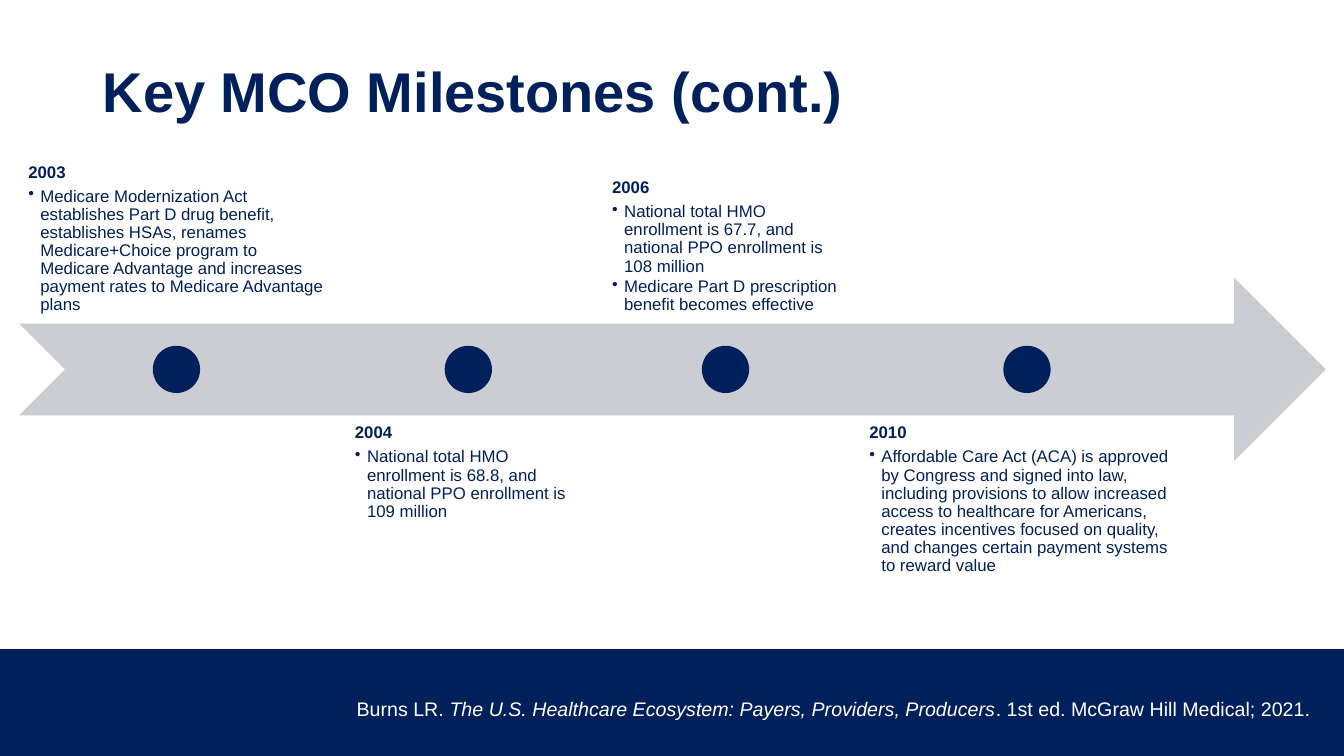
from dataclasses import dataclass

from lxml.etree import SubElement
from pptx import Presentation
from pptx.dml.color import RGBColor
from pptx.enum.shapes import MSO_SHAPE as Shape
from pptx.enum.text import MSO_ANCHOR as Anchor
from pptx.oxml.ns import qn
from pptx.util import Inches, Pt


@dataclass(frozen=True)
class Theme:
    """Colours, font and type sizes of the deck."""
    navy: RGBColor = RGBColor.from_string("00205B")
    grey: RGBColor = RGBColor.from_string("CCCDD2")
    white: RGBColor = RGBColor.from_string("FFFFFF")
    font: str = "Arial"
    title: float = 40
    body: float = 12
    source: float = 14
    line_spacing: float = 0.9


@dataclass(frozen=True)
class Box:
    """A rectangle that hands out areas of itself in percent."""
    left: float
    top: float
    width: float
    height: float

    def inner(self, left, top, width, height):
        """Return the inner box at the given percentages."""
        return Box(self.left + self.width * left / 100,
                   self.top + self.height * top / 100,
                   self.width * width / 100, self.height * height / 100)

    def lengths(self):
        """Return the position and size as whole slide units."""
        return [int(length) for length in (self.left, self.top, self.width, self.height)]


THEME = Theme()
MILESTONES = [
    ("2003", 24.07, [
        "Medicare Modernization Act establishes Part D drug benefit, establishes HSAs, "
        "renames Medicare+Choice program to Medicare Advantage and increases payment "
        "rates to Medicare Advantage plans"]),
    ("2004", 18.75, [
        "National total HMO enrollment is 68.8, and national PPO enrollment is 109 million"]),
    ("2006", 18.75, [
        "National total HMO enrollment is 67.7, and national PPO enrollment is 108 million",
        "Medicare Part D prescription benefit becomes effective"]),
    ("2010", 25.54, [
        "Affordable Care Act (ACA) is approved by Congress and signed into law, including "
        "provisions to allow increased access to healthcare for Americans, creates "
        "incentives focused on quality, and changes certain payment systems to reward value"]),
]
COLUMN_GAP = 0.93
SOURCE = [
    ("Burns LR. ", False),
    ("The U.S. Healthcare Ecosystem: Payers, Providers, Producers", True),
    (". 1st ed. McGraw Hill Medical; 2021.", False),
]


def add_filled(page, kind, box, color):
    """Add a flat shape without an outline."""
    shape = page.shapes.add_shape(kind, *box.lengths())
    shape.shadow.inherit = False
    shape.fill.solid()
    shape.fill.fore_color.rgb = color
    shape.line.fill.background()
    return shape


def add_frame(page, box, anchor=Anchor.TOP, wrap=True):
    """Add a text box and return its text frame."""
    frame = page.shapes.add_textbox(*box.lengths()).text_frame
    frame.word_wrap = wrap
    frame.vertical_anchor = anchor
    return frame


def style(span, size, color, bold=False, italic=False):
    """Format one run of text."""
    font = span.font
    font.name, font.size, font.bold, font.italic = THEME.font, Pt(size), bold, italic
    font.color.rgb = color


def add_bullet(para):
    """Give a paragraph a round bullet with a hanging indent."""
    properties = para._p.get_or_add_pPr()
    properties.set("marL", str(Inches(0.12)))
    properties.set("indent", str(-Inches(0.12)))
    SubElement(properties, qn("a:buChar"), char="•")


def add_title(page, box):
    """Write the slide title."""
    para = add_frame(page, box, Anchor.MIDDLE).paragraphs[0]
    para.text = "Key MCO Milestones (cont.)"
    para.line_spacing = THEME.line_spacing
    style(para.runs[0], THEME.title, THEME.navy, bold=True)


def add_milestone(page, box, anchor, year, events):
    """Write a year and its bulleted events."""
    frame = add_frame(page, box, anchor)
    frame.margin_left = frame.margin_right = Inches(0.09)
    frame.margin_top = frame.margin_bottom = Inches(0.09)
    frame.text = "\n".join([year, *events])
    for index, para in enumerate(frame.paragraphs):
        is_year = index == 0
        if not is_year:
            add_bullet(para)
        para.line_spacing = THEME.line_spacing
        para.space_after = Pt(THEME.body * (0.35 if is_year else 0.15))
        style(para.runs[0], THEME.body, THEME.navy, bold=is_year)


def add_timeline(page, box):
    """Draw the arrow with milestones alternating above and below it."""
    add_filled(page, Shape.NOTCHED_RIGHT_ARROW, box.inner(0, 30, 100, 40), THEME.grey)
    left = 0
    for index, (year, width, events) in enumerate(MILESTONES):
        top, anchor = (60, Anchor.TOP) if index % 2 else (0, Anchor.BOTTOM)
        add_milestone(page, box.inner(left, top, width, 40), anchor, year, events)
        middle = box.inner(left + width / 2, 45, 0, 10)
        size = middle.height
        dot = add_filled(page, Shape.OVAL,
                         Box(middle.left - size / 2, middle.top, size, size), THEME.navy)
        dot.line.color.rgb = THEME.navy
        dot.line.width = Pt(1)
        left += width + COLUMN_GAP


def add_footer(page, box):
    """Draw the bottom band with the source line."""
    add_filled(page, Shape.RECTANGLE, box, THEME.navy)
    para = add_frame(page, box.inner(25.8, 39.6, 72.84, 32), wrap=False).paragraphs[0]
    for text, italic in SOURCE:
        span = para.add_run()
        span.text = text
        style(span, THEME.source, THEME.white, italic=italic)


def main():
    """Build the deck and save it."""
    deck = Presentation()
    deck.slide_width, deck.slide_height = Inches(13.33), Inches(7.5)
    page = deck.slides.add_slide(deck.slide_layouts[6])
    whole = Box(0, 0, deck.slide_width, deck.slide_height)
    add_footer(page, whole.inner(0, 85.87, 100, 14.13))
    add_title(page, whole.inner(6.9, 5.33, 86.27, 14.27))
    add_timeline(page, whole.inner(1.43, 18.53, 97.22, 60.67))
    deck.save("out.pptx")


if __name__ == "__main__":
    main()
